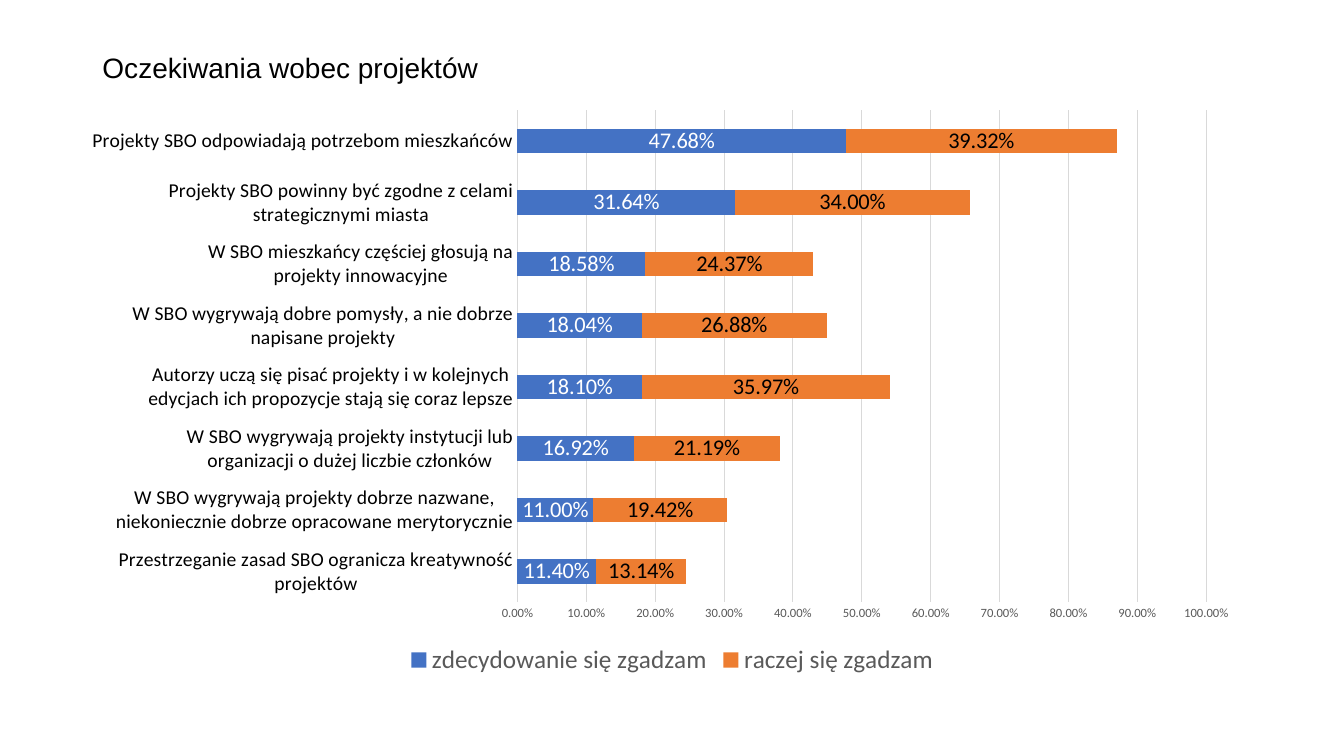
from pptx import Presentation
from pptx.chart.data import CategoryChartData
from pptx.dml.color import RGBColor
from pptx.enum import chart as ch, text as tx
from pptx.util import Emu, Pt

PX = 9525
BLACK = RGBColor(0x00, 0x00, 0x00)
WHITE = RGBColor(0xFF, 0xFF, 0xFF)
GREY = RGBColor(0x59, 0x59, 0x59)
GRID = RGBColor(0xD9, 0xD9, 0xD9)
BLUE = RGBColor(0x44, 0x72, 0xC4)
ORANGE = RGBColor(0xED, 0x7D, 0x31)
PERCENT = "0.00%"

STATEMENTS = [
    ("Przestrzeganie zasad SBO ogranicza kreatywność\nprojektów", 0.114, 0.1314),
    ("W SBO wygrywają projekty dobrze nazwane,\n"
     "niekoniecznie dobrze opracowane merytorycznie", 0.11, 0.1942),
    ("W SBO wygrywają projekty instytucji lub\n"
     "organizacji o dużej liczbie członków", 0.1692, 0.2119),
    ("Autorzy uczą się pisać projekty i w kolejnych\n"
     "edycjach ich propozycje stają się coraz lepsze", 0.181, 0.3597),
    ("W SBO wygrywają dobre pomysły, a nie dobrze\nnapisane projekty", 0.1804, 0.2688),
    ("W SBO mieszkańcy częściej głosują na\nprojekty innowacyjne", 0.1858, 0.2437),
    ("Projekty SBO powinny być zgodne z celami\nstrategicznymi miasta", 0.3164, 0.34),
    ("Projekty SBO odpowiadają potrzebom mieszkańców", 0.4768, 0.3932),
]
ANSWERS = [
    ("zdecydowanie się zgadzam", BLUE, WHITE),
    ("raczej się zgadzam", ORANGE, BLACK),
]


def emu(box):
    return [Emu(length * PX) for length in box]


def set_font(font, size, color, name="Calibri"):
    font.size, font.name, font.bold = Pt(size), name, False
    font.color.rgb = color


def set_line(line, color):
    line.color.rgb = color
    line.width = Pt(0.75)


def add_title(slide, box, wording):
    title = slide.shapes.title
    title.left, title.top, title.width, title.height = emu(box)
    frame = title.text_frame
    frame.vertical_anchor = tx.MSO_ANCHOR.MIDDLE
    frame.word_wrap = True
    heading = frame.paragraphs[0]
    heading.alignment = tx.PP_ALIGN.LEFT
    heading.line_spacing = 0.9
    run = heading.add_run()
    run.text = wording
    set_font(run.font, 20, BLACK, "Arial")


def format_axes(chart):
    statements, shares = chart.category_axis, chart.value_axis
    for axis, size, color in ((statements, 14, BLACK), (shares, 9, GREY)):
        axis.major_tick_mark = axis.minor_tick_mark = ch.XL_TICK_MARK.NONE
        set_font(axis.tick_labels.font, size, color)
    set_line(statements.format.line, GRID)
    shares.format.line.fill.background()
    shares.minimum_scale, shares.maximum_scale, shares.major_unit = 0, 1, 0.1
    shares.has_major_gridlines = True
    set_line(shares.major_gridlines.format.line, GRID)
    shares.tick_labels.number_format = PERCENT
    shares.tick_labels.number_format_is_linked = False


def format_answers(plot):
    plot.gap_width, plot.overlap = 150, 100
    plot.vary_by_categories = False
    for series, (_, color, label_color) in zip(plot.series, ANSWERS):
        series.format.fill.solid()
        series.format.fill.fore_color.rgb = color
        labels = series.data_labels
        labels.show_value = True
        labels.number_format = PERCENT
        labels.number_format_is_linked = False
        labels.position = ch.XL_LABEL_POSITION.CENTER
        set_font(labels.font, 16, label_color)


def add_agreement_chart(slide, box):
    names, *shares = zip(*STATEMENTS)
    agreement = CategoryChartData(number_format=PERCENT)
    agreement.categories = names
    for (answer, _, _), values in zip(ANSWERS, shares):
        agreement.add_series(answer, values)
    chart = slide.shapes.add_chart(
        ch.XL_CHART_TYPE.BAR_STACKED, *emu(box), agreement).chart
    chart.has_title = False
    set_font(chart.font, 10, BLACK)
    format_axes(chart)
    format_answers(chart.plots[0])
    chart.has_legend = True
    chart.legend.position = ch.XL_LEGEND_POSITION.BOTTOM
    chart.legend.include_in_layout = False
    set_font(chart.legend.font, 18, GREY)


def main():
    deck = Presentation()
    deck.slide_width, deck.slide_height = emu((1280, 720))
    slide = deck.slides.add_slide(deck.slide_layouts[5])
    add_title(slide, (88, 38, 1104, 56), "Oczekiwania wobec projektów")
    add_agreement_chart(slide, (88, 94, 1104, 554))
    deck.save("out.pptx")


if __name__ == "__main__":
    main()
